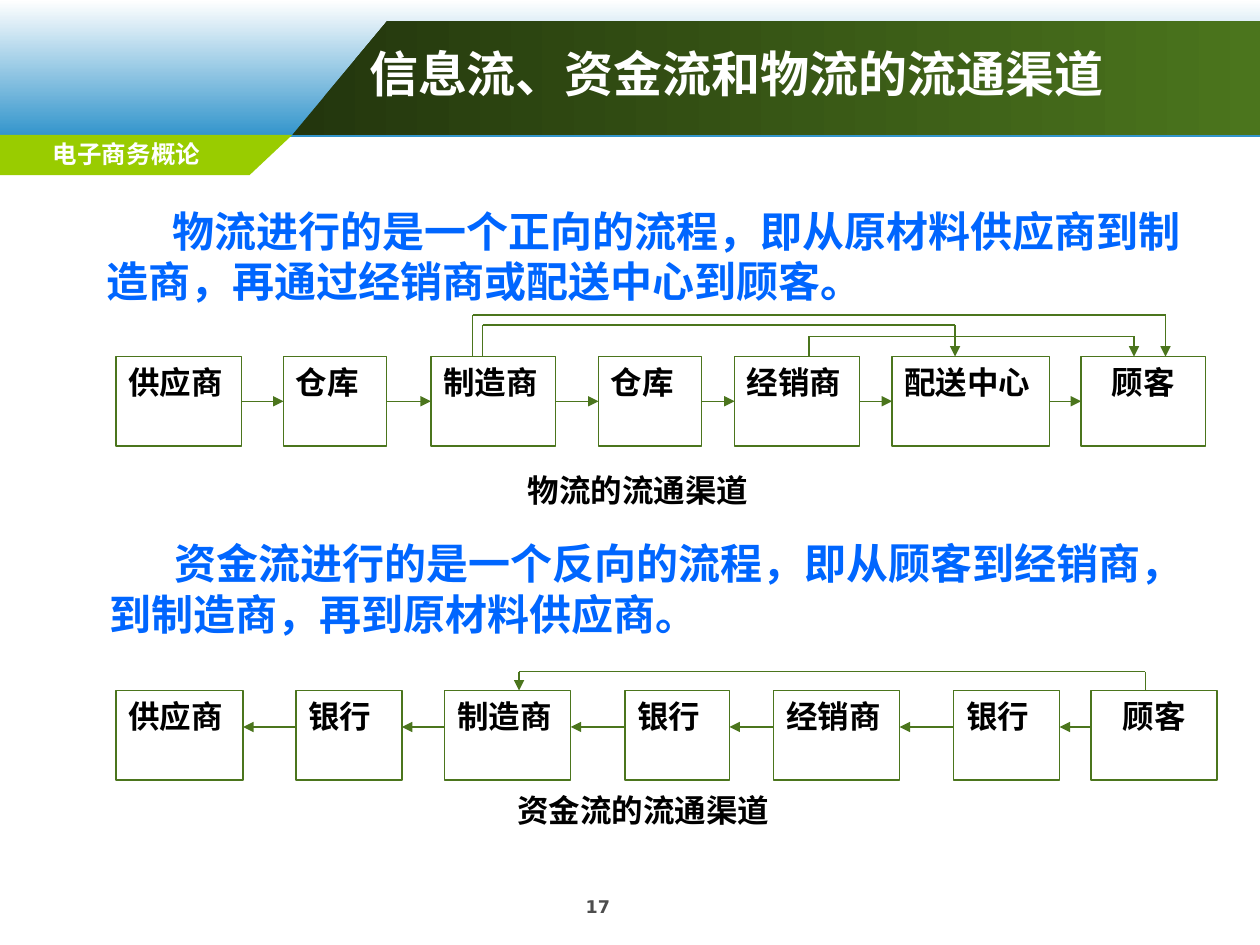
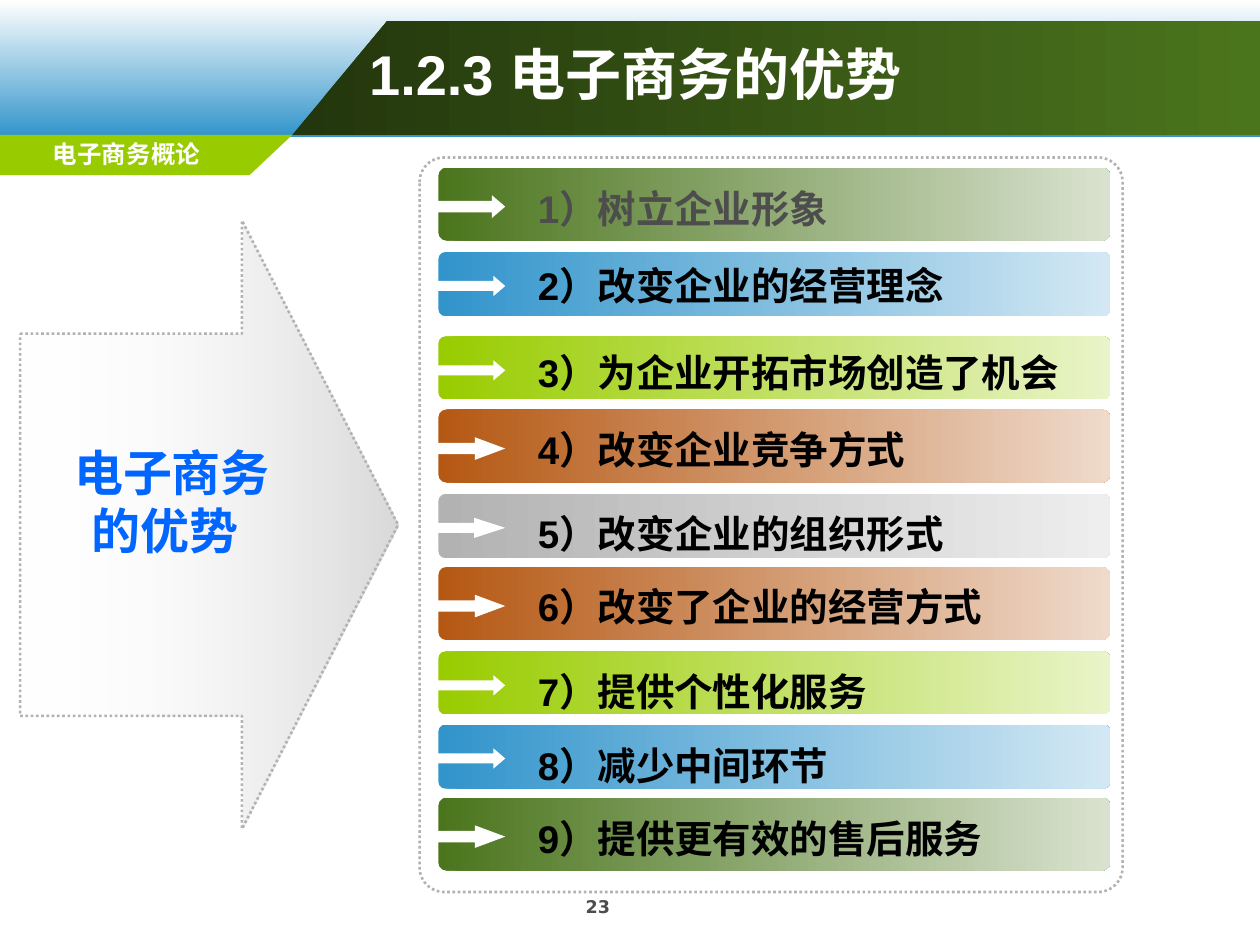
from dataclasses import dataclass
from itertools import pairwise
from typing import Any, NamedTuple

from lxml.etree import SubElement
from pptx import Presentation
from pptx.dml.color import RGBColor
from pptx.enum.dml import MSO_LINE as Dash
from pptx.enum.shapes import MSO_CONNECTOR as Link, MSO_SHAPE as Form
from pptx.enum.text import MSO_ANCHOR as Anchor, MSO_AUTO_SIZE as Fit, PP_ALIGN as Align
from pptx.oxml.ns import qn
from pptx.util import Emu, Pt

PX = 9144
TITLE_ONLY = 5
TOP, LEFT, BOTTOM, RIGHT = range(4)


@dataclass(frozen=True)
class Theme:
    white: str = "FFFFFF"
    black: str = "000000"
    gray: str = "4D4D4D"
    silver: str = "B2B2B2"
    mist: str = "EEEEEE"
    text_blue: str = "0066FF"
    sky: str = "3194CB"
    pale_sky: str = "D3E8F4"
    forest: str = "23360D"
    green: str = "4B751D"
    pale_green: str = "D9E2CF"
    lime: str = "99CC00"
    pale_lime: str = "E9F4C9"
    rust: str = "B55813"
    pale_rust: str = "EFDACB"
    body_font: str = "Arial"
    title_font: str = "Noto Sans CJK SC"
    label_font: str = "DejaVu Sans"
    flow_title: int = 28
    list_title: int = 32
    topic: int = 28
    lead: int = 24
    item: int = 22
    node: int = 18
    section: int = 14
    number: int = 10
    hairline: float = 0.75
    dotted: float = 1.5


THEME = Theme()


class Area(NamedTuple):
    left: int
    top: int
    width: int
    height: int


class Node(NamedTuple):
    name: str
    left: int
    width: int


class Bypass(NamedTuple):
    start: int
    end: int
    top: int


@dataclass(frozen=True)
class Flow:
    lead: str
    lead_area: Area
    caption: str
    caption_area: Area
    top: int
    arrow_y: int
    forward: bool
    joined: bool
    nodes: tuple[Node, ...]
    bypasses: tuple[Bypass, ...]


class Advantage(NamedTuple):
    text: str
    top: int
    height: int
    text_top: int
    start: str
    finish: str
    head: float = 0.583
    ink: str = THEME.black


NODE_HEIGHT = 71
FLOWS = (
    Flow(
        "物流进行的是一个正向的流程，即从原材料供应商到制造商，再通过经销商或配送中心到顾客。",
        Area(75, 158, 892, 83), "物流的流通渠道", Area(396, 369, 221, 40),
        283, 317, True, True,
        (Node("供应商", 92, 100), Node("仓库", 225, 82), Node("制造商", 342, 99),
         Node("仓库", 475, 82), Node("经销商", 583, 99), Node("配送中心", 708, 125),
         Node("顾客", 858, 99)),
        (Bypass(642, 900, 267), Bypass(383, 758, 258), Bypass(375, 925, 250)),
    ),
    Flow(
        "资金流进行的是一个反向的流程，即从顾客到经销商，到制造商，再到原材料供应商。",
        Area(77, 422, 898, 91), "资金流的流通渠道", Area(399, 623, 223, 40),
        548, 577, False, False,
        (Node("供应商", 92, 101), Node("银行", 235, 84), Node("制造商", 353, 100),
         Node("银行", 496, 83), Node("经销商", 614, 100), Node("银行", 757, 84),
         Node("顾客", 866, 100)),
        (Bypass(909, 412, 533),),
    ),
)

GREENS = (THEME.green, THEME.pale_green)
SKIES = (THEME.sky, THEME.pale_sky)
LIMES = (THEME.lime, THEME.pale_lime)
RUSTS = (THEME.rust, THEME.pale_rust)
GRAYS = (THEME.silver, THEME.mist)
ADVANTAGES = (
    Advantage("1）树立企业形象", 133, 58, 142, *GREENS, ink=THEME.gray),
    Advantage("2）改变企业的经营理念", 200, 51, 203, *SKIES),
    Advantage("3）为企业开拓市场创造了机会", 267, 50, 272, *LIMES),
    Advantage("4）改变企业竞争方式", 325, 58, 333, *RUSTS, head=1.343),
    Advantage("5）改变企业的组织形式", 392, 51, 400, *GRAYS, head=1.545),
    Advantage("6）改变了企业的经营方式", 450, 58, 458, *RUSTS, head=1.343),
    Advantage("7）提供个性化服务", 517, 50, 525, *LIMES),
    Advantage("8）减少中间环节", 575, 51, 584, *SKIES),
    Advantage("9）提供更有效的售后服务", 633, 58, 642, *GREENS, head=1.343),
)


def emu(*lengths: int) -> list[Emu]:
    return [Emu(length * PX) for length in lengths]


def rgb(color: str) -> RGBColor:
    return RGBColor.from_string(color)


def write(box: Any, text: str, *, size: int, color: str = THEME.black,
          font: str = THEME.body_font, align: Align = Align.LEFT,
          anchor: Anchor = Anchor.TOP, margin: int = 0, indent: int = 0) -> None:
    frame = box.text_frame
    frame.word_wrap = True
    frame.auto_size = Fit.NONE
    frame.vertical_anchor = anchor
    para = frame.paragraphs[0]
    para.text = text
    para.alignment = align
    layout = next(box.element.iter(qn("a:pPr")))
    layout.set("marL", str(margin * PX))
    layout.set("indent", str(indent * PX))
    for span in para.runs:
        span.font.name = font
        span.font.size = Pt(size)
        span.font.bold = True
        span.font.color.rgb = rgb(color)
    for props in box.element.iter(qn("a:rPr")):
        SubElement(props, qn("a:ea"), typeface=font)


def add_text(page: Any, area: Area, text: str, **style: Any) -> None:
    write(page.shapes.add_textbox(*emu(*area)), text, **style)


def paint(shape: Any, *, fill: str = "", finish: str = "", angle: int = 0,
          line: str = "", width: float = THEME.hairline, dotted: bool = False) -> None:
    shape.shadow.inherit = False
    if finish:
        shape.fill.gradient()
        shape.fill.gradient_angle = angle
        for stop, color in zip(shape.fill.gradient_stops, (fill, finish)):
            stop.color.rgb = rgb(color)
    elif fill:
        shape.fill.solid()
        shape.fill.fore_color.rgb = rgb(fill)
    else:
        shape.fill.background()
    if line:
        shape.line.color.rgb = rgb(line)
        shape.line.width = Pt(width)
        if dotted:
            shape.line.dash_style = Dash.ROUND_DOT
    else:
        shape.line.fill.background()


def add_form(page: Any, form: Form, area: Area, *adjustments: float, **look: Any) -> Any:
    shape = page.shapes.add_shape(form, *emu(*area))
    for index, value in enumerate(adjustments):
        shape.adjustments[index] = value
    paint(shape, **look)
    return shape


def add_outline(page: Any, points: list[tuple[int, int]], **look: Any) -> None:
    corners = [tuple(emu(*point)) for point in points]
    builder = page.shapes.build_freeform(*corners[0])
    builder.add_line_segments(corners[1:], close=True)
    paint(builder.convert_to_shape(), **look)


def add_line(page: Any, start: tuple[int, int], end: tuple[int, int], *,
             arrow: bool = False) -> Any:
    line = page.shapes.add_connector(Link.STRAIGHT, *emu(*start, *end))
    line.line.color.rgb = rgb(THEME.green)
    line.line.width = Pt(THEME.hairline)
    props = line.element.spPr
    if arrow:
        SubElement(props.find(qn("a:ln")), qn("a:tailEnd"), type="triangle")
    SubElement(props, qn("a:effectLst"))
    return line


def add_page(deck: Any, title: str, title_area: Area, number: int, *,
             title_size: int, title_font: str) -> Any:
    page = deck.slides.add_slide(deck.slide_layouts[TITLE_ONLY])
    add_form(page, Form.RECTANGLE, Area(0, 0, 1000, 109),
             fill=THEME.white, finish=THEME.sky, angle=270)
    add_outline(page, [(232, 107), (1001, 107), (1001, 17), (307, 17)],
                fill=THEME.forest, finish=THEME.green)
    add_outline(page, [(0, 107), (232, 107), (198, 139), (0, 139)], fill=THEME.lime)
    add_text(page, Area(4, 105, 193, 31), "电子商务概论", size=THEME.section,
             color=THEME.white, font=THEME.label_font, align=Align.CENTER)
    add_text(page, Area(358, 706, 233, 33), str(number), size=THEME.number,
             color=THEME.gray, font=THEME.label_font, align=Align.CENTER)
    heading = page.shapes.title
    heading.left, heading.top, heading.width, heading.height = emu(*title_area)
    write(heading, title, size=title_size, color=THEME.white, font=title_font,
          anchor=Anchor.MIDDLE)
    heading.element.getparent().append(heading.element)
    return page


def draw_flow(page: Any, flow: Flow) -> None:
    add_text(page, flow.lead_area, flow.lead, size=THEME.lead,
             color=THEME.text_blue, indent=52)
    add_text(page, flow.caption_area, flow.caption, size=THEME.node, align=Align.CENTER)
    boxes = []
    for node in flow.nodes:
        box = add_form(page, Form.RECTANGLE,
                       Area(node.left, flow.top, node.width, NODE_HEIGHT), line=THEME.green)
        write(box, node.name, size=THEME.node,
              align=Align.CENTER if node is flow.nodes[-1] else Align.LEFT)
        boxes.append(box)
    for (node, box), (following, next_box) in pairwise(zip(flow.nodes, boxes)):
        start = (node.left + node.width, flow.arrow_y)
        end = (following.left, flow.arrow_y)
        if not flow.forward:
            start, end = end, start
        arrow = add_line(page, start, end, arrow=True)
        if flow.joined:
            arrow.begin_connect(box, RIGHT)
            arrow.end_connect(next_box, LEFT)
    for bypass in flow.bypasses:
        add_line(page, (bypass.start, flow.top), (bypass.start, bypass.top))
        add_line(page, (bypass.start, bypass.top), (bypass.end, bypass.top))
        add_line(page, (bypass.end, bypass.top), (bypass.end, flow.top), arrow=True)


def draw_topic(page: Any) -> None:
    arrow = add_form(page, Form.RIGHT_ARROW, Area(16, 175, 300, 483), 0.628, 0.413,
                     fill=THEME.white, finish=THEME.silver, line=THEME.silver,
                     width=THEME.dotted, dotted=True)
    stops = arrow.element.spPr.find(qn("a:gradFill")).iter(qn("a:srgbClr"))
    for color, opacity in zip(stops, (0, 50000)):
        SubElement(color, qn("a:alpha"), val=str(opacity))
    add_text(page, Area(25, 346, 242, 104), "电子商务\v的优势", size=THEME.topic,
             color=THEME.text_blue, margin=38, indent=-14)


def draw_advantage(page: Any, item: Advantage) -> None:
    add_form(page, Form.ROUNDED_RECTANGLE, Area(348, item.top, 533, item.height), 0.109,
             fill=item.start, finish=item.finish)
    pointer = Area(343, item.top + round(item.height * 0.375), 58, round(item.height * 0.31))
    add_form(page, Form.RIGHT_ARROW, pointer, 0.5, item.head, fill=THEME.white)
    add_text(page, Area(417, item.text_top, 491, 47), item.text,
             size=THEME.item, color=item.ink)


def main() -> None:
    deck = Presentation()
    deck.slide_width, deck.slide_height = emu(1000, 750)

    channels = add_page(deck, "信息流、资金流和物流的流通渠道", Area(283, 25, 717, 66), 17,
                        title_size=THEME.flow_title, title_font=THEME.title_font)
    for flow in FLOWS:
        draw_flow(channels, flow)

    benefits = add_page(deck, "1.2.3 电子商务的优势", Area(283, 25, 689, 66), 23,
                        title_size=THEME.list_title, title_font=THEME.body_font)
    draw_topic(benefits)
    add_form(benefits, Form.ROUNDED_RECTANGLE, Area(333, 125, 558, 583), 0.035,
             line=THEME.silver, width=THEME.dotted, dotted=True)
    for item in ADVANTAGES:
        draw_advantage(benefits, item)

    deck.save("out.pptx")


if __name__ == "__main__":
    main()
